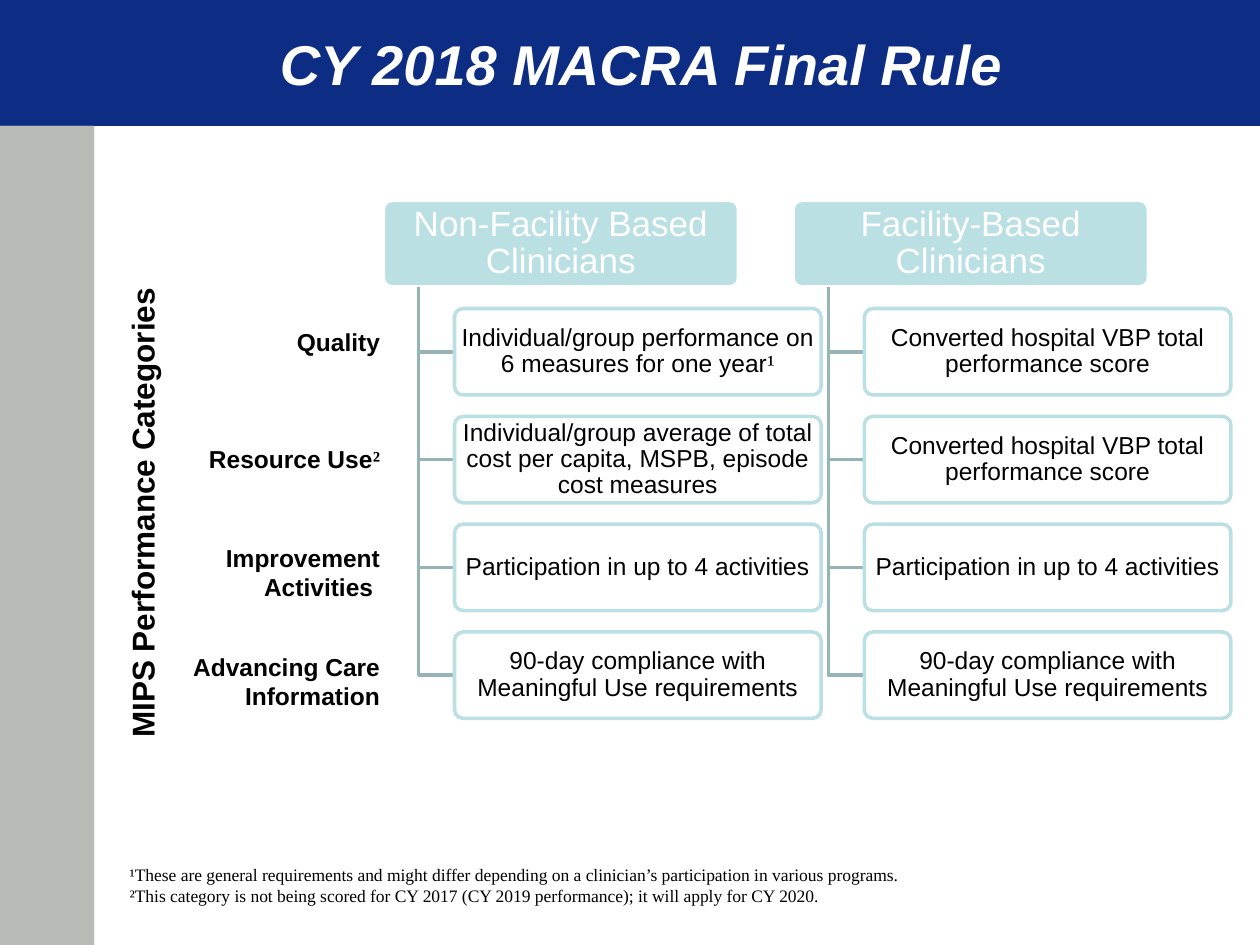
from pptx import Presentation
from pptx.dml.color import RGBColor
from pptx.enum.shapes import MSO_SHAPE as Shape
from pptx.enum.text import MSO_ANCHOR as Anchor, MSO_AUTO_SIZE as AutoSize, PP_ALIGN as Align
from pptx.oxml.ns import qn
from pptx.util import Pt
from lxml import etree

COLORS = {
    "navy": "0C2D83", "edge": "CCCCCC", "side": "B7BAB5", "aqua": "BBE0E3",
    "branch": "96B3B6", "white": "FFFFFF", "black": "000000",
}
SANS, SERIF = "Arial", "Times New Roman"


def add_block(kind, left, top, width, height, fill, line=None):
    block = page.shapes.add_shape(kind, Pt(left), Pt(top), Pt(width), Pt(height))
    block.shadow.inherit = False
    block.fill.solid()
    block.fill.fore_color.rgb = RGBColor.from_string(COLORS[fill])
    if line:
        block.line.color.rgb = RGBColor.from_string(COLORS[line])
        block.line.width = Pt(2)
    else:
        block.line.fill.background()
    return block


def write(box, text, size, color="black", font=SANS, align=Align.CENTER, bold=False):
    """Fill a box with text, one paragraph a line; sans footnote marks turn serif."""
    frame = box.text_frame
    frame.word_wrap = True
    for index, line in enumerate(text.split("\n")):
        para = frame.add_paragraph() if index else frame.paragraphs[0]
        para.alignment = align
        para.font.name, para.font.size, para.font.bold = font, Pt(size), bold
        para.font.color.rgb = RGBColor.from_string(COLORS[color])
        if line[-1] in "¹²":
            para.add_run().text = line[:-1]
            mark = para.add_run()
            mark.text, mark.font.name = line[-1], SERIF
        else:
            para.add_run().text = line
    return frame


deck = Presentation()
deck.slide_width, deck.slide_height = Pt(720), Pt(540)
page = deck.slides.add_slide(deck.slide_layouts[5])

# Banner and side bar
add_block(Shape.RECTANGLE, 0, 0, 720, 72, "navy")
add_block(Shape.RECTANGLE, 0, 72, 54, 468, "edge")
add_block(Shape.RECTANGLE, 0, 72, 53.5, 468, "side")

# Title, brought in front of the banner
title = page.shapes.title
title.left, title.top, title.width, title.height = Pt(72), Pt(0), Pt(589), Pt(72)
frame = write(title, "CY 2018 MACRA Final Rule", 32, "white", bold=True)
frame.vertical_anchor = Anchor.MIDDLE
frame.paragraphs[0].font.italic = True
title.element.getparent().append(title.element)

# Two clinician trees: header, branches, requirement boxes
TREES = {
    "Non-Facility Based Clinicians": [
        "Individual/group performance on 6 measures for one year¹",
        "Individual/group average of total cost per capita, MSPB, episode cost measures",
        "Participation in up to 4 activities",
        "90-day compliance with Meaningful Use requirements",
    ],
    "Facility-Based Clinicians": [
        "Converted hospital VBP total performance score",
        "Converted hospital VBP total performance score",
        "Participation in up to 4 activities",
        "90-day compliance with Meaningful Use requirements",
    ],
}
HEADER_TOP, BOX_TOP, BOX_HEIGHT, ROW_PITCH = 114.5, 176.3, 49.4, 61.6
for column, (heading, requirements) in enumerate(TREES.items()):
    left = 219 + 234.2 * column
    trunk, box_left = left + 20.3, left + 40.7
    header = add_block(Shape.ROUNDED_RECTANGLE, left, HEADER_TOP, 203, BOX_HEIGHT, "aqua", "white")
    blocks = [(header, heading, 20, "white", 2.9, 1.9)]

    for row, requirement in enumerate(requirements):
        top = BOX_TOP + ROW_PITCH * row
        middle = top + BOX_HEIGHT / 2
        builder = page.shapes.build_freeform(Pt(trunk), Pt(HEADER_TOP + BOX_HEIGHT))
        builder.add_line_segments(
            [(Pt(trunk), Pt(middle)), (Pt(box_left), Pt(middle))], close=False)
        branch = builder.convert_to_shape()
        branch.shadow.inherit = False
        branch.fill.background()
        branch.line.color.rgb = RGBColor.from_string(COLORS["branch"])
        branch.line.width = Pt(2)

        box = add_block(Shape.ROUNDED_RECTANGLE, box_left, top, 209.5, BOX_HEIGHT, "white", "aqua")
        tint = box.element.spPr.find(qn("a:solidFill"))[0]
        etree.SubElement(tint, qn("a:alpha"), val="90000")
        blocks.append((box, requirement, 14, "black", 1.9, 1.3))

    for block, text, size, color, side, edge in blocks:
        block.adjustments[0] = 0.1
        frame = write(block, text, size, color)
        frame.vertical_anchor = Anchor.MIDDLE
        frame.margin_left = frame.margin_right = Pt(side)
        frame.margin_top = frame.margin_bottom = Pt(edge)
        frame.paragraphs[0].line_spacing = 0.9

# Category labels, all ending at the same right edge
LABEL_RIGHT = 224.3
LABELS = [
    ("Quality", 183.6, 82, 24.2),
    ("Resource Use²", 250.4, 130, 24.2),
    ("Improvement Activities ", 306.7, 139, 41.2),
    ("Advancing Care Information", 368.9, 152, 41.2),
]
for text, top, width, height in LABELS:
    label = page.shapes.add_textbox(Pt(LABEL_RIGHT - width), Pt(top), Pt(width), Pt(height))
    write(label, text, 14, align=Align.RIGHT, bold=True).auto_size = AutoSize.SHAPE_TO_FIT_TEXT

# Rotated heading of the categories
axis = page.shapes.add_textbox(Pt(-59.8), Pt(278.6), Pt(282.2), Pt(29))
axis.rotation = 270
write(axis, "MIPS Performance Categories", 18, bold=True).auto_size = AutoSize.SHAPE_TO_FIT_TEXT

# Footnotes
notes = page.shapes.add_textbox(Pt(67), Pt(490.3), Pt(493), Pt(31.5))
write(
    notes,
    "¹These are general requirements and might differ depending on a clinician’s "
    "participation in various programs.\n"
    "²This category is not being scored for CY 2017 (CY 2019 performance); "
    "it will apply for CY 2020.",
    10, font=SERIF, align=Align.LEFT,
).auto_size = AutoSize.SHAPE_TO_FIT_TEXT

deck.save("out.pptx")
